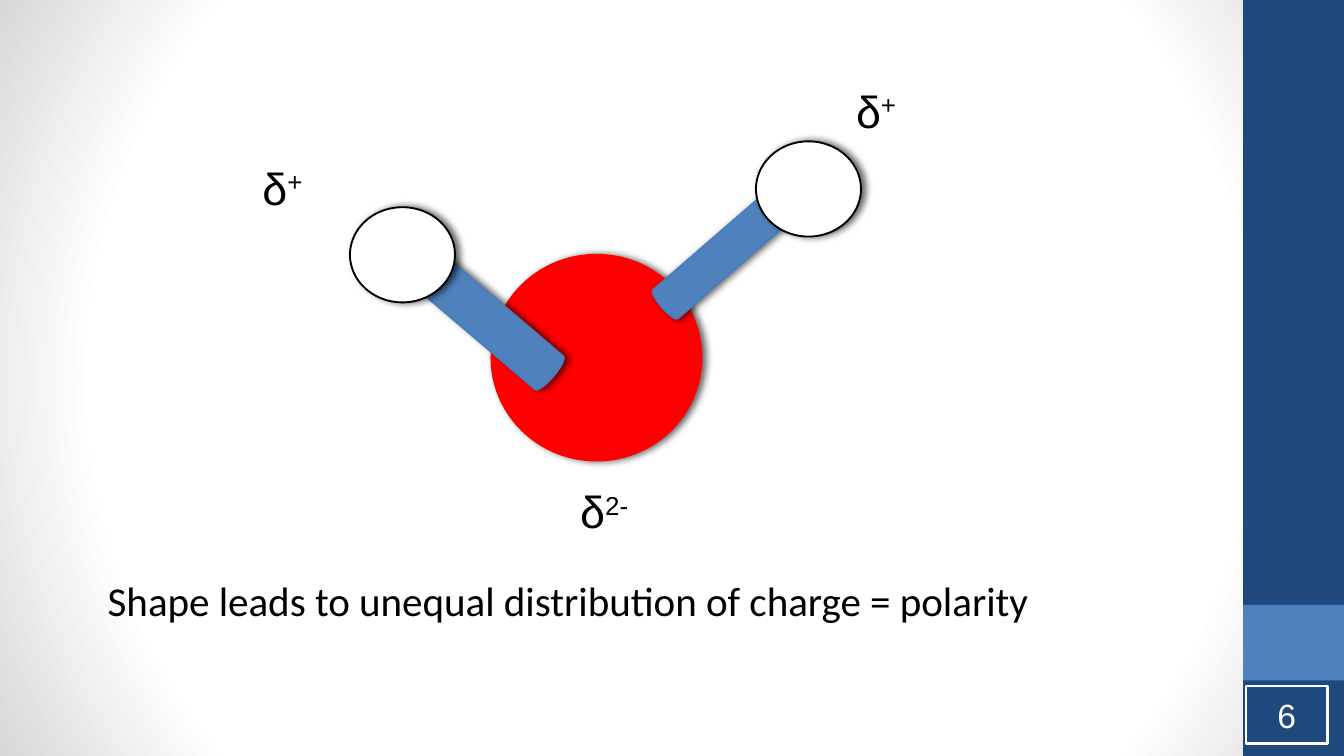
"""Build a slide showing the polarity of a bent three-atom molecule."""
from pptx import Presentation
from pptx.dml.color import RGBColor
from pptx.enum.shapes import MSO_SHAPE
from pptx.enum.text import MSO_ANCHOR, PP_ALIGN
from pptx.oxml import parse_xml
from pptx.oxml.ns import nsdecls
from pptx.util import Pt

PX = 9525
NAVY, BLUE, BOND_EDGE = "1F497D", "4F81BD", "4A7DBA"
RED, WHITE, BLACK = "FF0000", "FFFFFF", "000000"
SHADOW = f"""<a:effectLst {nsdecls('a')}>
  <a:outerShdw blurRad="50800" dist="25400" dir="0" algn="ctr" rotWithShape="0">
    <a:srgbClr val="{BLACK}"><a:alpha val="60000"/></a:srgbClr>
  </a:outerShdw>
</a:effectLst>"""
BACKGROUND = f"""<p:bg {nsdecls('p', 'a')}><p:bgPr>
  <a:gradFill rotWithShape="1">
    <a:gsLst>
      <a:gs pos="0"><a:srgbClr val="{WHITE}"/></a:gs>
      <a:gs pos="75000"><a:srgbClr val="{WHITE}"/></a:gs>
      <a:gs pos="100000"><a:srgbClr val="D8D8D8"/></a:gs>
    </a:gsLst>
    <a:path path="circle"><a:fillToRect l="50000" t="50000" r="50000" b="50000"/></a:path>
  </a:gradFill>
  <a:effectLst/>
</p:bgPr></p:bg>"""


def color(value):
    return RGBColor.from_string(value)


def style(span, size, font, value):
    span.font.size = Pt(size)
    span.font.name = font
    span.font.color.rgb = color(value)


deck = Presentation()
deck.slide_width, deck.slide_height = 960 * PX, 540 * PX
page = deck.slides.add_slide(deck.slide_layouts[6])
page.element.cSld.insert(0, parse_xml(BACKGROUND))

for top, height, fill in [(0, 540, NAVY), (432, 54, BLUE)]:
    band = page.shapes.add_shape(MSO_SHAPE.RECTANGLE, 888 * PX, top * PX, 72 * PX, height * PX)
    band.shadow.inherit = False
    band.fill.solid()
    band.fill.fore_color.rgb = color(fill)
    band.line.fill.background()

caption = page.shapes.add_textbox(55 * PX, 365 * PX, 776 * PX, 156 * PX)
caption.text_frame.word_wrap = True
caption.text_frame.margin_left = 22 * PX
caption.text_frame.margin_top = 46 * PX
caption.text_frame.text = "Shape leads to unequal distribution of charge = polarity"
style(caption.text_frame.paragraphs[0].runs[0], 22, "Calibri", BLACK)

molecule = [
    (MSO_SHAPE.OVAL, 351, 182, 150, 147, 0, RED, RED),
    (MSO_SHAPE.CAN, 502, 126, 27, 113, 49.1, BLUE, BOND_EDGE),
    (MSO_SHAPE.OVAL, 540, 101, 75, 68, 0, WHITE, BLACK),
    (MSO_SHAPE.CAN, 336, 174, 31, 115, 310.4, BLUE, BOND_EDGE),
    (MSO_SHAPE.OVAL, 250, 148, 75, 68, 0, WHITE, BLACK),
]
for kind, left, top, width, height, angle, fill, edge in molecule:
    part = page.shapes.add_shape(kind, left * PX, top * PX, width * PX, height * PX)
    part.rotation = angle
    part.fill.solid()
    part.fill.fore_color.rgb = color(fill)
    part.line.color.rgb = color(edge)
    part.line.width = Pt(1)
    part.element.spPr.append(parse_xml(SHADOW))

charges = [(602, 55, 120, "+"), (405, 341, 83, "2-"), (178, 110, 120, "+")]
for left, top, width, charge in charges:
    label = page.shapes.add_textbox(left * PX, top * PX, width * PX, 48 * PX)
    label.text_frame.word_wrap = True
    label.text_frame.text = "δ"
    para = label.text_frame.paragraphs[0]
    superscript = para.add_run()
    superscript.text = charge
    for span in para.runs:
        style(span, 24, "Arial", BLACK)
    superscript._r.get_or_add_rPr().set("baseline", "30000")

number = page.shapes.add_shape(MSO_SHAPE.RECTANGLE, 890 * PX, 490 * PX, 58 * PX, 41 * PX)
number.shadow.inherit = False
number.fill.background()
number.line.color.rgb = color(WHITE)
number.line.width = Pt(1.5)
number.text_frame.vertical_anchor = MSO_ANCHOR.MIDDLE
number.text_frame.text = "6"
para = number.text_frame.paragraphs[0]
para.alignment = PP_ALIGN.CENTER
style(para.runs[0], 18, "Arial", WHITE)

deck.save("out.pptx")
